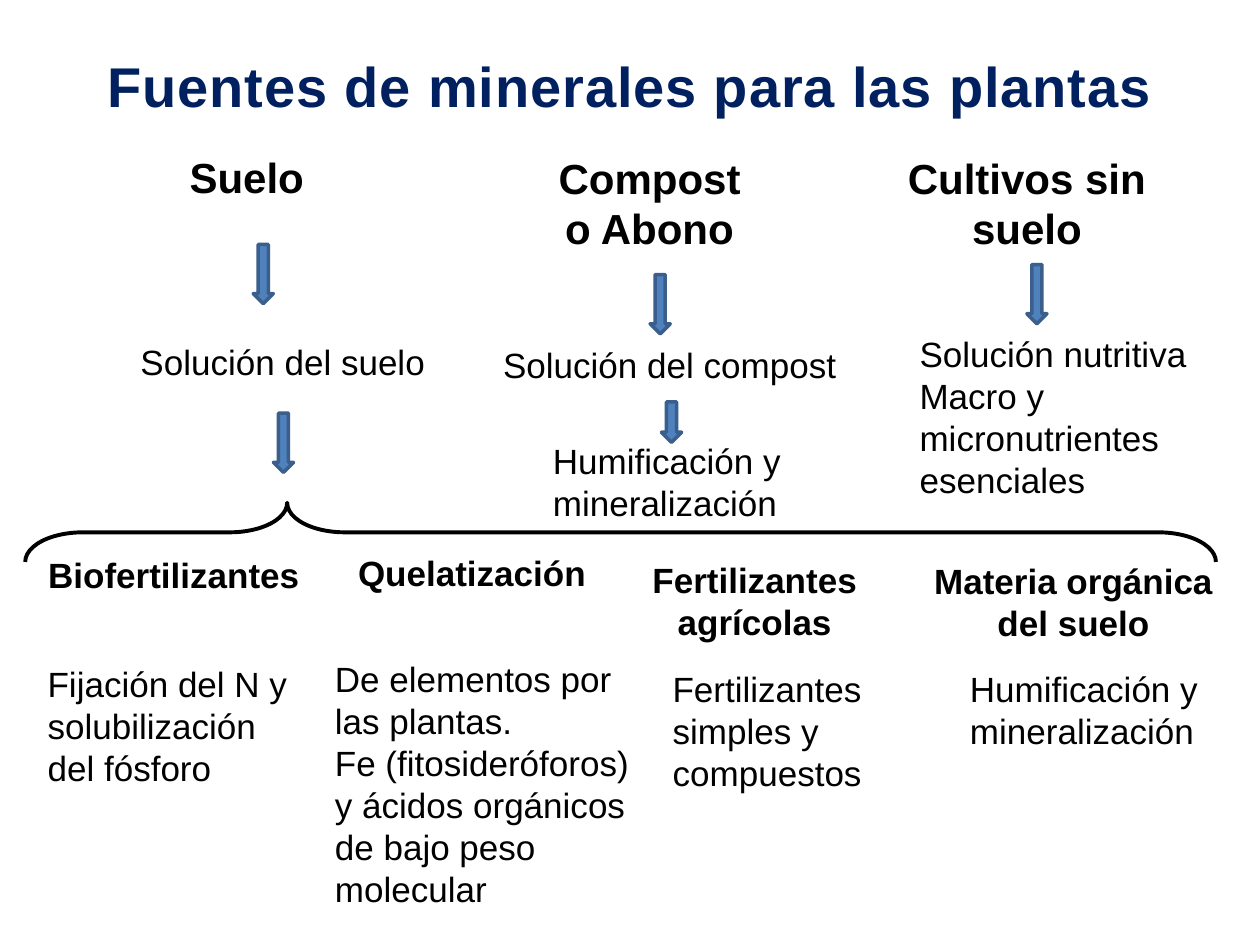
from dataclasses import dataclass

from pptx import Presentation
from pptx.dml.color import RGBColor
from pptx.enum.shapes import MSO_SHAPE as Preset
from pptx.enum.text import MSO_AUTO_SIZE as AutoSize, PP_ALIGN as Align
from pptx.util import Inches, Pt


@dataclass(frozen=True)
class Theme:
    font: str = "Arial"
    navy: str = "002060"
    black: str = "000000"
    arrow_fill: str = "4F81BD"
    arrow_line: str = "3A5F8C"
    title_size: int = 32
    source_size: int = 24
    body_size: int = 20
    arrow_weight: float = 2
    brace_weight: float = 2.25
    title_spacing: int = 50


THEME = Theme()

TITLE = (["Fuentes de minerales para las plantas"], (0.59, 0.36, 8.82, 0.64))
SOURCES = [
    (["Suelo "], (1.22, 1.15, 1.57, 0.5)),
    (["Compost o Abono"], (4.21, 1.16, 1.89, 0.91)),
    (["Cultivos sin suelo"], (6.97, 1.16, 2.36, 0.91)),
]
SOLUTIONS = [
    (["Solución del suelo"], (0.83, 2.65, 2.83, 0.44)),
    (["Solución del compost"], (3.82, 2.68, 2.99, 0.44)),
]
SOIL_INPUTS = [
    (["Biofertilizantes "], (0.28, 4.34, 2.2, 0.44)),
    (["Quelatización "], (2.72, 4.33, 2.13, 0.44)),
    (["Fertilizantes agrícolas"], (4.69, 4.38, 2.6, 0.77)),
    (["Materia orgánica del suelo"], (7.2, 4.39, 2.64, 0.77)),
]
DETAILS = [
    (["Solución nutritiva", "Macro y micronutrientes esenciales"], (7.2, 2.59, 2.76, 1.45)),
    (["Humificación y mineralización"], (4.29, 3.44, 2.13, 0.77)),
    (["Fijación del N y solubilización del fósforo"], (0.28, 5.21, 2.13, 1.11)),
    (["De elementos por las plantas.",
      "Fe (fitosideróforos) y ácidos orgánicos de bajo peso molecular"], (2.56, 5.17, 2.6, 2.12)),
    (["Fertilizantes simples y compuestos"], (5.24, 5.25, 2.44, 1.11)),
    (["Humificación y mineralización"], (7.6, 5.25, 2.13, 0.77)),
]
ARROW_WIDTH = 0.16
ARROWS = [
    (2.01, 1.94, 0.47),
    (5.16, 2.18, 0.47),
    (8.15, 2.1, 0.47),
    (2.17, 3.28, 0.47),
    (5.25, 3.19, 0.32),
]
BRACE_BOX = (4.69, -0.5, 0.47, 9.45)
BRACE_CURVE, BRACE_POINT = 0.97, 0.78


def add_label(slide, label, size, bold=False, align=Align.CENTER, color=THEME.black, spacing=None):
    lines, box = label
    frame = slide.shapes.add_textbox(*map(Inches, box)).text_frame
    frame.word_wrap = True
    frame.auto_size = AutoSize.SHAPE_TO_FIT_TEXT
    for index, line in enumerate(lines):
        paragraph = frame.add_paragraph() if index else frame.paragraphs[0]
        paragraph.alignment = align
        run = paragraph.add_run()
        run.text = line
        font = run.font
        font.name, font.size, font.bold = THEME.font, Pt(size), bold
        font.color.rgb = RGBColor.from_string(color)
        if spacing:
            run._r.get_or_add_rPr().set("spc", str(spacing))


def add_outline(slide, preset, box, color, weight):
    outline = slide.shapes.add_shape(preset, *map(Inches, box))
    outline.shadow.inherit = False
    outline.line.color.rgb = RGBColor.from_string(color)
    outline.line.width = Pt(weight)
    return outline


def add_arrow(slide, left, top, height):
    arrow = add_outline(slide, Preset.DOWN_ARROW, (left, top, ARROW_WIDTH, height),
                        THEME.arrow_line, THEME.arrow_weight)
    arrow.fill.solid()
    arrow.fill.fore_color.rgb = RGBColor.from_string(THEME.arrow_fill)


def add_brace(slide):
    brace = add_outline(slide, Preset.LEFT_BRACE, BRACE_BOX, THEME.black, THEME.brace_weight)
    brace.fill.background()
    brace.rotation = 90
    brace.adjustments[0], brace.adjustments[1] = BRACE_CURVE, BRACE_POINT


def main():
    """Build the slide on mineral sources for plants."""
    deck = Presentation()
    deck.slide_width, deck.slide_height = Inches(10), Inches(7.5)
    slide = deck.slides.add_slide(deck.slide_layouts[6])

    add_label(slide, TITLE, THEME.title_size, bold=True, color=THEME.navy,
              spacing=THEME.title_spacing)
    for source in SOURCES:
        add_label(slide, source, THEME.source_size, bold=True)
    for solution in SOLUTIONS:
        add_label(slide, solution, THEME.body_size)
    for soil_input in SOIL_INPUTS:
        add_label(slide, soil_input, THEME.body_size, bold=True)
    for detail in DETAILS:
        add_label(slide, detail, THEME.body_size, align=Align.LEFT)
    for arrow in ARROWS:
        add_arrow(slide, *arrow)
    add_brace(slide)
    deck.save("out.pptx")


if __name__ == "__main__":
    main()
